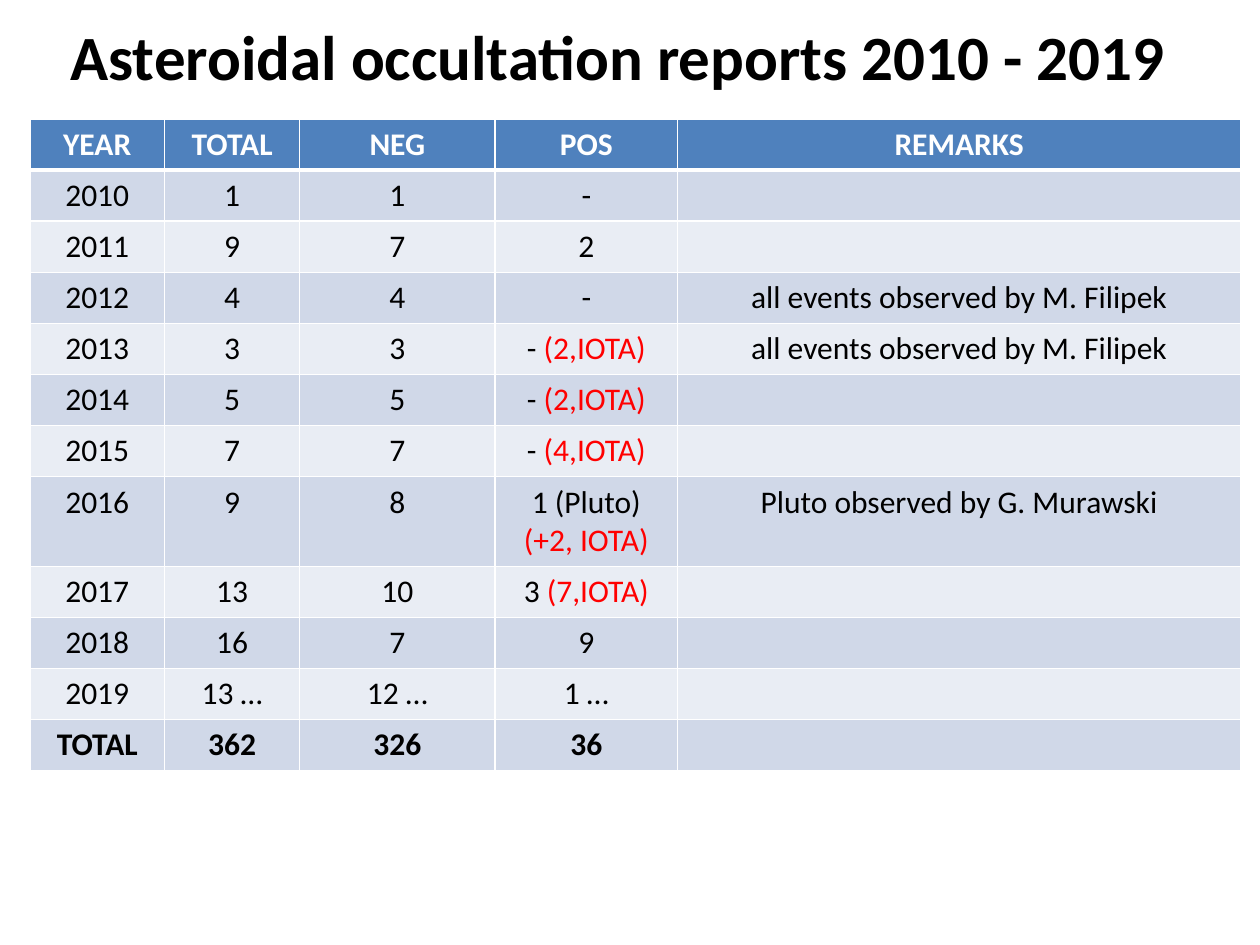
from lxml import etree
from pptx import Presentation
from pptx import util as u
from pptx.dml.color import RGBColor
from pptx.enum import text
from pptx.oxml import ns

COLORS = {"header": "4F81BD", "odd": "D0D8E8", "even": "E9EDF4",
          "white": "FFFFFF", "black": "000000", "iota": "FF0000"}
FILIPEK = "all events observed by M. Filipek"

# Year, total, negative, positive, remarks; a tuple adds the IOTA count in red
ROWS = [
    ("YEAR", "TOTAL", "NEG", "POS", "REMARKS"),
    ("2010", "1", "1", "-", ""),
    ("2011", "9", "7", "2", ""),
    ("2012", "4", "4", "-", FILIPEK),
    ("2013", "3", "3", ("- ", "(2,IOTA)"), FILIPEK),
    ("2014", "5", "5", ("- ", "(2,IOTA)"), ""),
    ("2015", "7", "7", ("- ", "(4,IOTA)"), ""),
    ("2016", "9", "8", ("1 (Pluto) ", "(+2, IOTA)"), "Pluto observed by G. Murawski"),
    ("2017", "13", "10", ("3 ", "(7,IOTA)"), ""),
    ("2018", "16", "7", "9", ""),
    ("2019", "13 …", "12 …", "1 …", ""),
    ("TOTAL", "362", "326", "36", ""),
]
COLUMN_WIDTHS = [2.72, 2.72, 3.94, 3.68, 11.35]
ROW_HEIGHT = 1.03


def format_run(run, size, color, bold):
    run.font.name = "Calibri"
    run.font.size = u.Pt(size)
    run.font.bold = bold
    run.font.color.rgb = RGBColor.from_string(COLORS[color])


def set_borders(cell, bottom_width):
    properties = cell._tc.get_or_add_tcPr()
    widths = {"lnL": 1, "lnR": 1, "lnT": 1, "lnB": bottom_width}
    for position, (side, width) in enumerate(widths.items()):
        line = etree.Element(ns.qn(f"a:{side}"), w=str(u.Pt(width)))
        fill = etree.SubElement(line, ns.qn("a:solidFill"))
        etree.SubElement(fill, ns.qn("a:srgbClr"), val=COLORS["white"])
        properties.insert(position, line)


presentation = Presentation()
presentation.slide_width, presentation.slide_height = u.Cm(25.4), u.Cm(19.05)
slide = presentation.slides.add_slide(presentation.slide_layouts[5])

# Title
title = slide.shapes.title
title.left, title.top = u.Cm(0.79), u.Cm(0)
title.width, title.height = u.Cm(23.34), u.Cm(2.21)
title.text_frame.text = "Asteroidal occultation reports 2010 - 2019"
title.text_frame.vertical_anchor = text.MSO_ANCHOR.MIDDLE
title.text_frame.paragraphs[0].alignment = text.PP_ALIGN.CENTER
format_run(title.text_frame.paragraphs[0].runs[0], 36, "black", True)

# Table grid
table = slide.shapes.add_table(
    len(ROWS), len(COLUMN_WIDTHS), u.Cm(0.6), u.Cm(2.4),
    u.Cm(sum(COLUMN_WIDTHS)), u.Cm(ROW_HEIGHT * len(ROWS))).table
for column, width in zip(table.columns, COLUMN_WIDTHS):
    column.width = u.Cm(width)
for row in table.rows:
    row.height = u.Cm(ROW_HEIGHT)

# Cells: header, banded years, bold totals
for row_index, values in enumerate(ROWS):
    is_header = row_index == 0
    is_bold = is_header or row_index == len(ROWS) - 1
    band = "header" if is_header else ("even", "odd")[row_index % 2]
    for column_index, value in enumerate(values):
        cell = table.cell(row_index, column_index)
        cell.fill.solid()
        cell.fill.fore_color.rgb = RGBColor.from_string(COLORS[band])
        # The header rule is shared with the top edge of the first year
        set_borders(cell, 3 if is_header else 1)
        if row_index == 1:
            cell._tc.tcPr.find(ns.qn("a:lnT")).set("w", str(u.Pt(3)))
        paragraph = cell.text_frame.paragraphs[0]
        paragraph.alignment = text.PP_ALIGN.CENTER
        count, iota = value if isinstance(value, tuple) else (value, "")
        paragraph.text = count
        for run in paragraph.runs:
            format_run(run, 18, "white" if is_header else "black", is_bold)
        if iota:
            run = paragraph.add_run()
            run.text = iota
            format_run(run, 18, "iota", False)

presentation.save("out.pptx")
